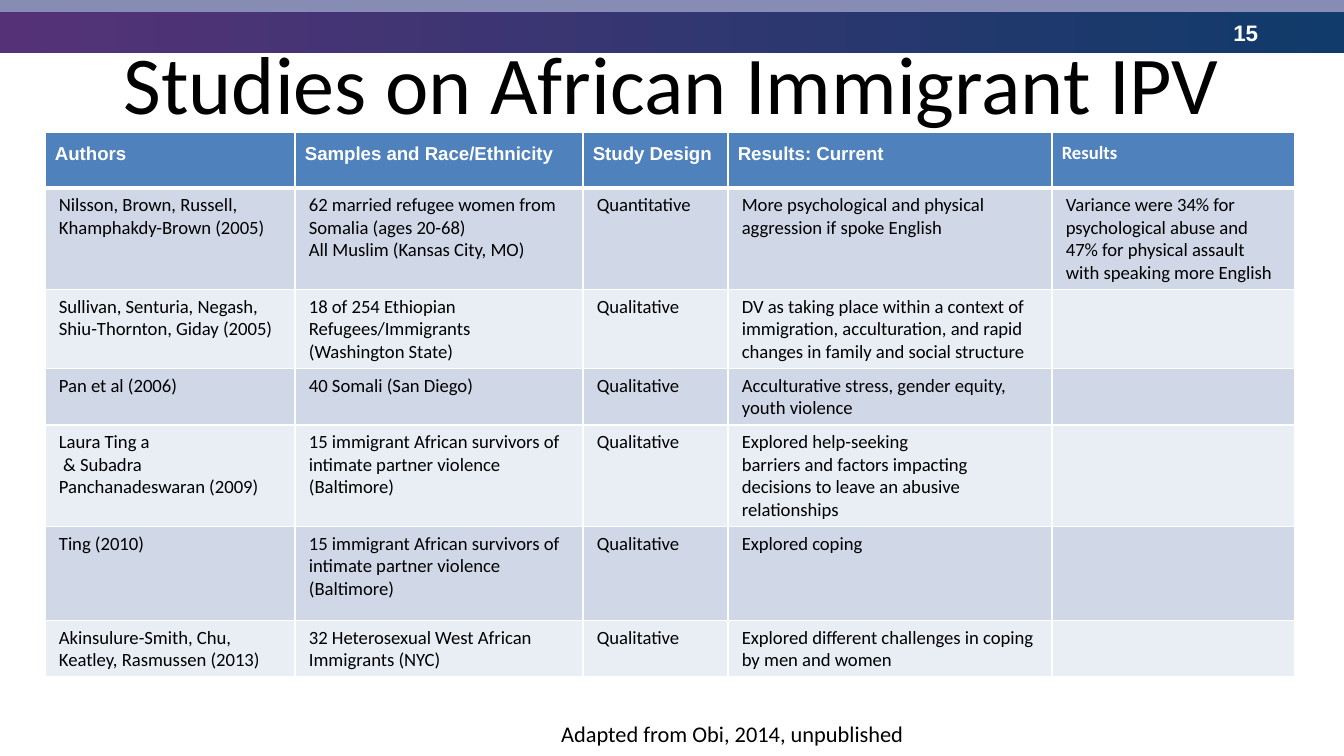
import lxml.etree
import pptx
import pptx.dml.color
import pptx.enum.shapes
import pptx.enum.text
import pptx.oxml.ns
import pptx.util

PX = 914400 / 134.4
COLORS = {
    "white": "FFFFFF", "black": "000000", "purple": "553278", "navy": "103B6A",
    "lavender": "878CB4", "header": "4F81BD", "band": "D0D8E8", "pale": "E9EDF4",
}
COLUMNS = [250, 288, 145, 324, 243]
ROWS = [56, 94, 73, 52, 94, 94, 52]
HEADERS = ["Authors", "Samples and Race/Ethnicity", "Study Design", "Results: Current", "Results"]
STUDIES = [
    ["Nilsson, Brown, Russell, Khamphakdy-Brown (2005)",
     "62 married refugee women from Somalia (ages 20-68)\nAll Muslim (Kansas City, MO)",
     "Quantitative",
     "More psychological and physical aggression if spoke English",
     "Variance were 34% for psychological abuse and 47% for physical assault "
     "with speaking more English"],
    ["Sullivan, Senturia, Negash, Shiu-Thornton, Giday (2005)",
     "18 of 254 Ethiopian Refugees/Immigrants (Washington State)",
     "Qualitative",
     "DV as taking place within a context of immigration, acculturation, and rapid "
     "changes in family and social structure", ""],
    ["Pan et al (2006)", "40 Somali (San Diego)", "Qualitative",
     "Acculturative stress, gender equity, youth violence", ""],
    ["Laura Ting a\n & Subadra Panchanadeswaran (2009)",
     "15 immigrant African survivors of intimate partner violence\n(Baltimore)",
     "Qualitative",
     "Explored help-seeking\nbarriers and factors impacting decisions to leave an abusive "
     "relationships", ""],
    ["Ting (2010)",
     "15 immigrant African survivors of intimate partner violence\n(Baltimore)",
     "Qualitative", "Explored coping", ""],
    ["Akinsulure-Smith, Chu, Keatley, Rasmussen (2013)",
     "32 Heterosexual West African Immigrants (NYC)", "Qualitative",
     "Explored different challenges in coping by men and women", ""],
]


def px(n):
    """Turn pixels into EMU."""
    return pptx.util.Emu(round(n * PX))


def rgb(name):
    """Look up a named colour."""
    return pptx.dml.color.RGBColor.from_string(COLORS[name])


def write(tf, text, size=10, font="Calibri", color="black", bold=False, align=None, spacing=None):
    """Write text into a frame, one paragraph per line."""
    for i, line in enumerate(text.split("\n")):
        p = tf.add_paragraph() if i else tf.paragraphs[0]
        p.alignment = align
        p.line_spacing = spacing
        r = p.add_run()
        r.text = line
        r.font.size = pptx.util.Pt(size)
        r.font.name = font
        r.font.bold = bold
        r.font.color.rgb = rgb(color)


def add_bar(s, x, y, w, h):
    """Add a plain rectangle and return it."""
    sp = s.shapes.add_shape(pptx.enum.shapes.MSO_SHAPE.RECTANGLE, px(x), px(y), px(w), px(h))
    sp.shadow.inherit = False
    sp.line.fill.background()
    return sp


def add_label(s, x, y, w, h, text, **fmt):
    """Add a wrapped text box."""
    tf = s.shapes.add_textbox(px(x), px(y), px(w), px(h)).text_frame
    tf.word_wrap = True
    write(tf, text, **fmt)


def add_banner(s, x, y, w, h):
    """Add the gradient banner with its top strip and slide number."""
    fill = add_bar(s, x, y + 9, w, h - 9).fill
    fill.gradient()
    fill.gradient_angle = 0
    for stop, position, name in zip(fill.gradient_stops, (0, 1), ("purple", "navy")):
        stop.position = position
        stop.color.rgb = rgb(name)
    add_label(s, x + 1220, y + 13, 101, 40, "15", size=12, font="Arial", color="white", bold=True)
    strip = add_bar(s, x, y, w, 12)
    strip.fill.solid()
    strip.fill.fore_color.rgb = rgb("lavender")


def place_title(s, x, y, w, h):
    """Move the title placeholder in front of the banner and format it."""
    title = s.shapes.title
    title.element.getparent().append(title.element)
    title.left, title.top, title.width, title.height = map(px, (x, y, w, h))
    tf = title.text_frame
    tf.word_wrap = True
    tf.margin_top = tf.margin_bottom = 0
    tf.vertical_anchor = pptx.enum.text.MSO_ANCHOR.MIDDLE
    write(tf, "Studies on African Immigrant IPV", size=44, align=pptx.enum.text.PP_ALIGN.CENTER)


def set_borders(cell, bottom, top):
    """Draw white borders around a cell, with widths in points."""
    tcPr = cell._tc.get_or_add_tcPr()
    qn = pptx.oxml.ns.qn
    for side, width in (("L", 1), ("R", 1), ("T", top), ("B", bottom)):
        ln = lxml.etree.SubElement(tcPr, qn(f"a:ln{side}"), w=str(pptx.util.Pt(width)))
        fill = lxml.etree.SubElement(ln, qn("a:solidFill"))
        lxml.etree.SubElement(fill, qn("a:srgbClr"), val=COLORS["white"])


def format_cell(cell, text, row, column):
    """Fill, border and write one table cell."""
    header = row == 0
    set_borders(cell, bottom=3 if header else 1, top=3 if row == 1 else 1)
    cell.fill.solid()
    cell.fill.fore_color.rgb = rgb("header" if header else "band" if row % 2 else "pale")
    cell.margin_left = cell.margin_right = px(10 if header else 14)
    cell.margin_top = px(0 if header else 6)
    cell.margin_bottom = px(0 if header else 5)
    if header:
        font = "Calibri" if column == len(HEADERS) - 1 else "Arial"
        write(cell.text_frame, text, font=font, color="white", bold=True,
              spacing=pptx.util.Pt(17.4))
    elif text:
        write(cell.text_frame, text)


def add_studies(s, x, y):
    """Add the table of studies."""
    data = [HEADERS] + STUDIES
    table = s.shapes.add_table(len(ROWS), len(COLUMNS), px(x), px(y),
                               px(sum(COLUMNS)), px(sum(ROWS))).table
    table.first_row = table.horz_banding = False
    for column, width in zip(table.columns, COLUMNS):
        column.width = px(width)
    for row, height in zip(table.rows, ROWS):
        row.height = px(height)
    for i, texts in enumerate(data):
        for j, text in enumerate(texts):
            format_cell(table.cell(i, j), text, i, j)


def main():
    """Build the slide and save it."""
    prs = pptx.Presentation()
    prs.slide_width, prs.slide_height = px(1344), px(756)
    s = prs.slides.add_slide(prs.slide_layouts[5])
    add_banner(s, 0, 0, 1344, 53)
    place_title(s, 67, 32, 1210, 100)
    add_studies(s, 45, 132)
    add_label(s, 548, 714, 672, 40, "Adapted from Obi, 2014, unpublished", size=12)
    prs.save("out.pptx")


if __name__ == "__main__":
    main()
